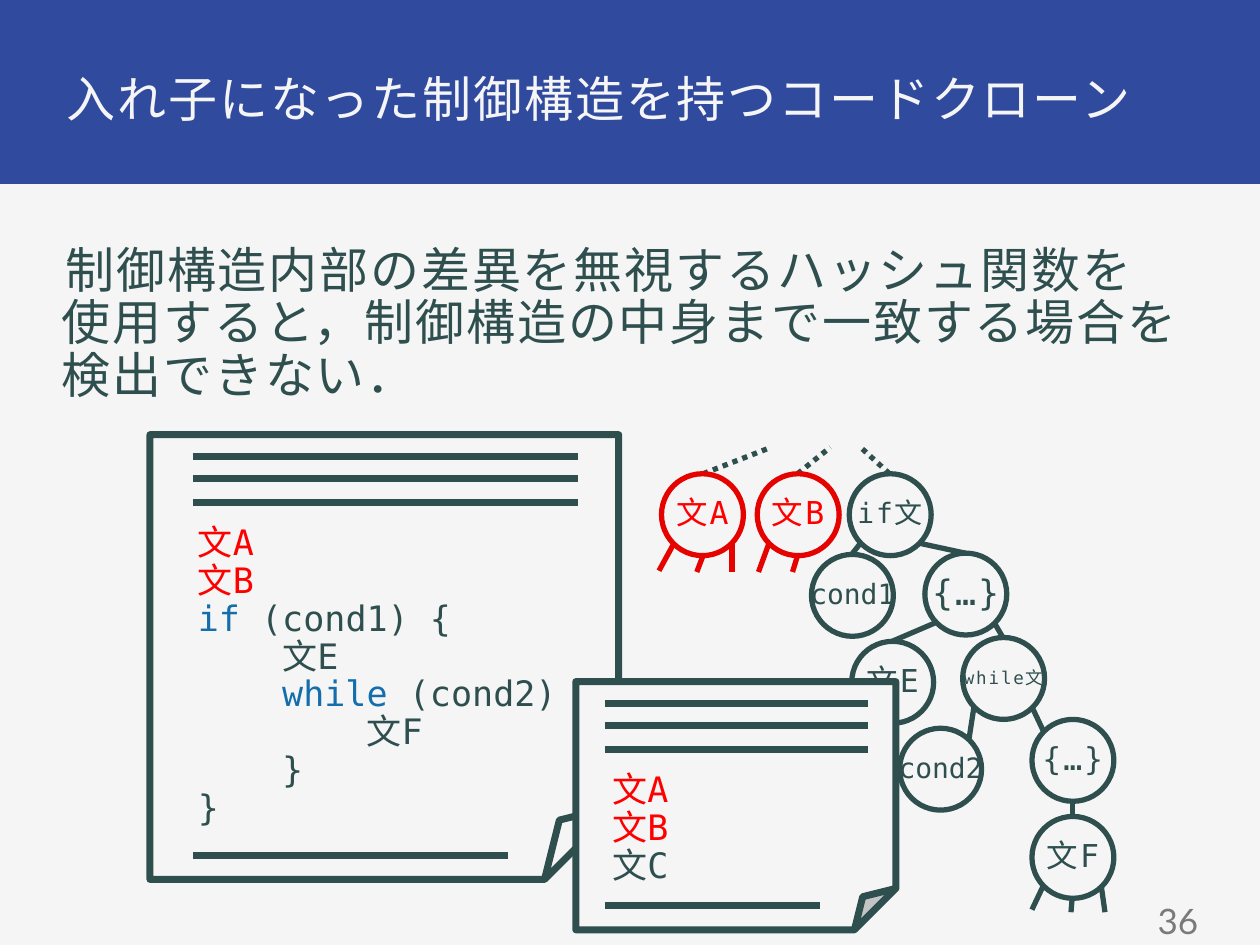
import pptx
import pptx.util
import pptx.dml.color
import pptx.enum.dml
import pptx.enum.shapes
import pptx.enum.text
import pptx.oxml
import pptx.oxml.ns

Inches, Pt = pptx.util.Inches, pptx.util.Pt
SHAPE = pptx.enum.shapes.MSO_SHAPE
ALIGN = pptx.enum.text.PP_ALIGN
ANCHOR = pptx.enum.text.MSO_ANCHOR

BLUE, PALE, DARK, GREY = "304A9E", "F5F5F5", "2F4F4F", "7A7A7A"
RED, RIM, KEY = "FF0000", "E50300", "136EAB"
MONO, SANS = "DejaVu Sans Mono", "Lato"
NODE = 0.65  # diameter of a tree node
STEP = 0.67  # indent of one code level: four characters


def color(code):
    return pptx.dml.color.RGBColor.from_string(code)


def write(shape, text, size=20, font=MONO, ink=DARK, align=ALIGN.LEFT,
          anchor=ANCHOR.TOP, pad=0.08, gap=0, lead=0.9, before=0, after=0,
          first=0):
    """Each line of text is (level, [(words, colour), ...]) or a plain string."""
    frame = shape.text_frame
    frame.auto_size = pptx.enum.text.MSO_AUTO_SIZE.NONE
    frame.word_wrap = False
    frame.vertical_anchor = anchor
    frame.margin_left = frame.margin_right = Inches(pad)
    frame.margin_top = frame.margin_bottom = Inches(pad)
    lines = [text] if isinstance(text, str) else text
    for i, line in enumerate(lines):
        level, parts = (0, [(line, ink)]) if isinstance(line, str) else line
        para = frame.paragraphs[0] if i == 0 else frame.add_paragraph()
        para.alignment, para.line_spacing = align, lead
        para.space_before = Pt(before if i == 0 else 0)
        para.space_after = Pt(after if i == len(lines) - 1 else 0)
        props = para._p.get_or_add_pPr()
        props.set("marL", str(Inches(level * STEP)))
        props.set("indent", str(Inches(first)))
        for words, tint in parts:
            for j, piece in enumerate(words.split("\n")):
                if j:
                    para.add_line_break()
                run = para.add_run()
                run.text = piece
                run.font.size, run.font.name = Pt(size), font
                run.font.color.rgb = color(tint)
                if gap:
                    run._r.get_or_add_rPr().set("spc", str(round(gap * 100)))


def label(slide, box, text, **form):
    item = slide.shapes.add_textbox(*map(Inches, box))
    write(item, text, **form)


def draw(slide, kind, box, fill=None, edge=None, width=3):
    item = slide.shapes.add_shape(kind, *map(Inches, box))
    item.shadow.inherit = False
    if fill:
        item.fill.solid()
        item.fill.fore_color.rgb = color(fill)
    else:
        item.fill.background()
    if edge:
        item.line.color.rgb = color(edge)
        item.line.width = Pt(width)
    else:
        item.line.fill.background()
    return item


def rule(slide, ends, ink=DARK, width=3, dots=False):
    item = slide.shapes.add_connector(
        pptx.enum.shapes.MSO_CONNECTOR.STRAIGHT, *map(Inches, ends))
    item.line.color.rgb = color(ink)
    item.line.width = Pt(width)
    if dots:
        item.line.dash_style = pptx.enum.dml.MSO_LINE.ROUND_DOT
    item.element.spPr.append(
        pptx.oxml.parse_xml("<a:effectLst %s/>" % pptx.oxml.ns.nsdecls("a")))


def header(slide, box):
    x, y, w, h = box
    title = slide.shapes.title
    band = draw(slide, SHAPE.RECTANGLE, box, BLUE)
    title.element.addprevious(band.element)
    title.left, title.top = Inches(x + 0.47), Inches(y + 0.54)
    title.width, title.height = Inches(9.13), Inches(0.59)
    write(title, "入れ子になった制御構造を持つコードクローン", size=28, font=SANS,
          ink=PALE, gap=1.1, before=16)


def sheet(slide, box, code, inset, span, short, place, fill=None):
    """Folded page: three rules, code lines, and a shorter rule at the foot."""
    x, y, w, h = box
    dx, dy, tw, th = place
    page = draw(slide, SHAPE.FOLDED_CORNER, box, fill, DARK, 4)
    label(slide, (x + dx, y + dy, tw, th), code, before=3, after=1)
    left = x + inset
    for row in (0.17, 0.35, 0.54):
        rule(slide, (left, y + row, left + span, y + row), width=4)
    foot = y + h - 0.19
    rule(slide, (left, foot, left + short, foot), width=4)
    return page


def tree(slide, box):
    x, y = box[:2]

    def lines(ends, **form):
        for a, b, c, d in ends:
            rule(slide, (x + a, y + b, x + c, y + d), **form)

    # Dotted links to the parent, which is not drawn
    lines([(1.83, 0.21, 1.6, 0), (1.1, 0.21, 1.36, 0),
           (0.35, 0.21, 0.89, 0)], dots=True)
    # Links between nodes
    lines([(1.53, 0.85, 1.6, 0.76), (2.43, 0.84, 2.06, 0.76),
           (1.85, 1.54, 2.2, 1.39), (2.73, 1.51, 2.66, 1.39),
           (2.46, 2.32, 2.5, 2.06), (3.05, 2.25, 2.96, 2.06),
           (3.28, 2.93, 3.28, 2.81)])
    # Open stems under the leaves
    lines([(0.12, 0.76, 0, 0.98), (0.35, 0.86, 0.3, 0.99),
           (0.58, 0.76, 0.58, 0.99), (0.87, 0.77, 0.79, 0.99),
           (1.1, 0.86, 1.06, 0.99)], ink=RIM)
    lines([(3.05, 3.48, 2.96, 3.67), (3.28, 3.57, 3.27, 3.69),
           (3.51, 3.48, 3.54, 3.69)])
    # Nodes: left, top, text, size, letter gap, text colour, rim
    for left, top, text, size, gap, ink, edge in (
            (0.02, 0.21, "文A", 18, 1.1, RED, RIM),
            (0.78, 0.21, "文B", 18, 1.1, RED, RIM),
            (1.51, 0.21, "if文", 16, 1.1, DARK, DARK),
            (1.21, 0.85, "cond1", 16, 0, DARK, DARK),
            (2.11, 0.84, "{…}", 20, 1.1, DARK, DARK),
            (1.53, 1.54, "文E", 18, 1.1, DARK, DARK),
            (2.41, 1.51, "while文", 10, 1.1, DARK, DARK),
            (1.91, 2.23, "cond2", 16, 0, DARK, DARK),
            (2.96, 2.16, "{…}", 18, 1.1, DARK, DARK),
            (2.96, 2.93, "文F", 18, 1.1, DARK, DARK)):
        node = draw(slide, SHAPE.OVAL, (x + left, y + top, NODE, NODE),
                    PALE, edge)
        write(node, text, size=size, gap=gap, ink=ink, align=ALIGN.CENTER,
              anchor=ANCHOR.MIDDLE, before=3, after=1)


def main():
    deck = pptx.Presentation()
    deck.slide_width, deck.slide_height = Inches(10), Inches(7.5)
    slide = deck.slides.add_slide(deck.slide_layouts[5])
    slide.background.fill.solid()
    slide.background.fill.fore_color.rgb = color(PALE)

    header(slide, (-0.02, -0.02, 10.04, 1.48))
    label(slide, (0.43, 1.89, 9.13, 5.18),
          "制御構造内部の差異を無視するハッシュ関数を\n"
          "使用すると，制御構造の中身まで一致する場合を\n検出できない．",
          size=28, font=SANS, pad=0.06, gap=1.1, before=14, first=0.03)
    label(slide, (7.32, 7.11, 2.25, 0.39), "36", font=SANS, ink=GREY,
          align=ALIGN.RIGHT, anchor=ANCHOR.MIDDLE, pad=0.06, lead=1)

    shared = [(0, [("文A", RED)]), (0, [("文B", RED)])]
    nested = [(0, [("if", KEY), (" (cond1) {", DARK)]),
              (1, [("文E", DARK)]),
              (1, [("while", KEY), (" (cond2) {", DARK)]),
              (2, [("文F", DARK)]),
              (1, [("}", DARK)]),
              (0, [("}", DARK)])]
    sheet(slide, (1.19, 3.45, 3.72, 3.53), shared + nested, 0.34, 3.06, 2.5,
          (0.3, 0.64, 3.06, 2.51))
    tree(slide, (5.23, 3.55, 3.61, 3.69))
    sheet(slide, (4.57, 5.41, 2.54, 1.97), shared + ["文C"], 0.23, 2.09, 1.71,
          (0.21, 0.64, 2.09, 0.95), PALE)
    deck.save("out.pptx")


if __name__ == "__main__":
    main()
